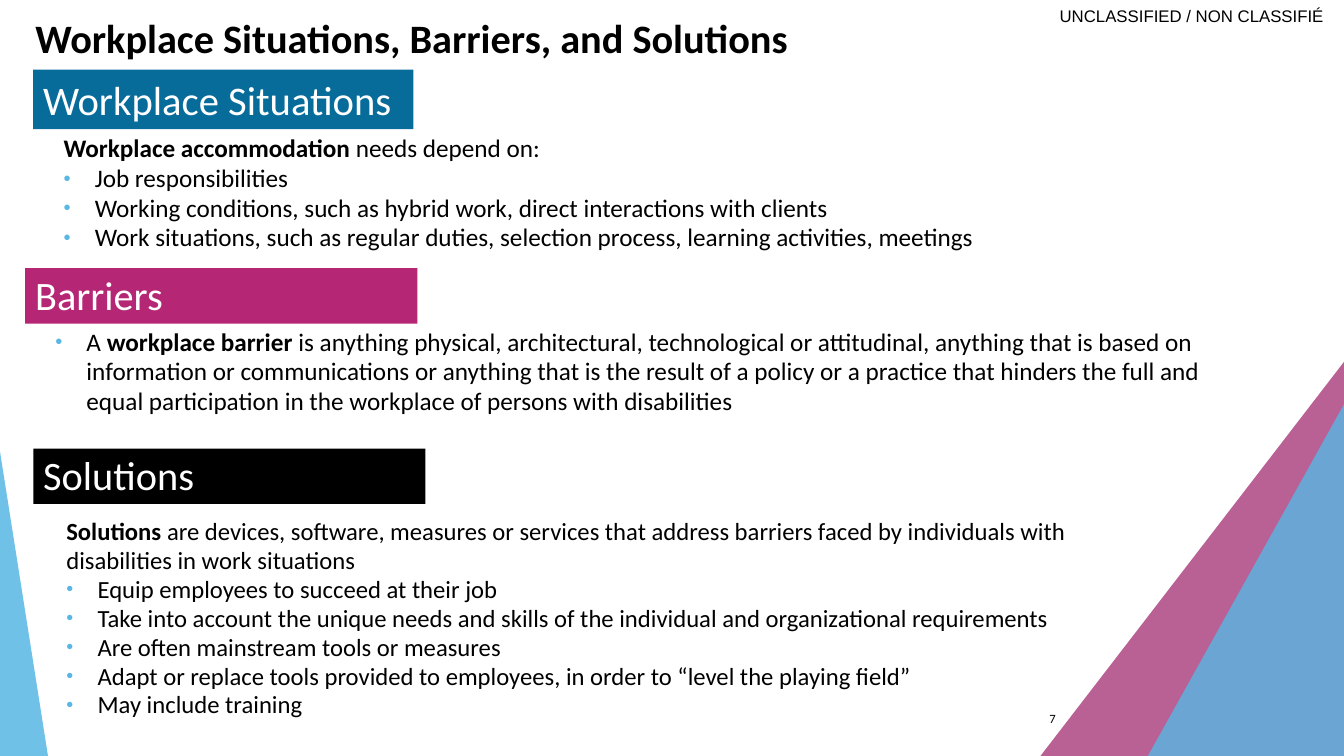
from lxml import etree
from pptx import Presentation
from pptx.dml.color import RGBColor
from pptx.enum import shapes, text
from pptx.oxml.ns import qn
from pptx.util import Inches, Pt

BLACK = RGBColor(0x00, 0x00, 0x00)
WHITE = RGBColor(0xFF, 0xFF, 0xFF)
TEAL = RGBColor(0x08, 0x6C, 0x9B)
PINK = RGBColor(0xB5, 0x27, 0x75)
PLUM = RGBColor(0x9E, 0x24, 0x6B)
SKY = RGBColor(0x58, 0xB7, 0xE3)


def place(sp, left, top, width, height):
    sp.left, sp.top = Inches(left), Inches(top)
    sp.width, sp.height = Inches(width), Inches(height)


def add_filled(slide, kind, box, color):
    sp = slide.shapes.add_shape(kind, *map(Inches, box))
    sp.shadow.inherit = False
    sp.fill.solid()
    sp.fill.fore_color.rgb = color
    sp.line.fill.background()
    return sp


def add_triangle(slide, box, color, opacity, apex):
    sp = add_filled(slide, shapes.MSO_SHAPE.ISOSCELES_TRIANGLE, box, color)
    sp.adjustments[0] = apex
    clr = sp.fill._xPr.find(".//" + qn("a:srgbClr"))
    etree.SubElement(clr, qn("a:alpha"), val=str(opacity * 1000))


def style_run(r, size, color=BLACK, bold=False, font="Calibri"):
    r.font.name, r.font.size, r.font.bold = font, Pt(size), bold
    r.font.color.rgb = color


def add_heading(slide, box, label, color, size=28.8):
    sp = add_filled(slide, shapes.MSO_SHAPE.RECTANGLE, box, color)
    tf = sp.text_frame
    tf.vertical_anchor = text.MSO_ANCHOR.BOTTOM
    tf.text = label
    p = tf.paragraphs[0]
    p.alignment = text.PP_ALIGN.LEFT
    style_run(p.runs[0], size, WHITE)


def add_label(slide, box, label, size, font, inset):
    tf = slide.shapes.add_textbox(*map(Inches, box)).text_frame
    tf.word_wrap = True
    tf.vertical_anchor = text.MSO_ANCHOR.MIDDLE
    tf.margin_left = tf.margin_right = Inches(inset)
    tf.margin_top = tf.margin_bottom = Inches(inset / 2)
    tf.text = label
    p = tf.paragraphs[0]
    p.alignment = text.PP_ALIGN.RIGHT
    style_run(p.runs[0], size, font=font)


def set_bullet(p, bulleted):
    pPr = p._p.get_or_add_pPr()
    indent = Inches(0.31) if bulleted else 0
    pPr.set("marL", str(indent))
    pPr.set("indent", str(-indent))
    if not bulleted:
        etree.SubElement(pPr, qn("a:buNone"))
        return
    clr = etree.SubElement(pPr, qn("a:buClr"))
    etree.SubElement(clr, qn("a:srgbClr"), val=str(SKY))
    etree.SubElement(pPr, qn("a:buSzPct"), val="80000")
    etree.SubElement(pPr, qn("a:buFont"), typeface="Arial")
    etree.SubElement(pPr, qn("a:buChar"), char="•")


def fill_body(tf, size, paragraphs, before=0):
    """Each paragraph is (bulleted, text); asterisks enclose bold words."""
    tf.word_wrap = True
    tf.auto_size = text.MSO_AUTO_SIZE.NONE
    for i, (bulleted, content) in enumerate(paragraphs):
        p = tf.add_paragraph() if i else tf.paragraphs[0]
        p.line_spacing = 0.98
        p.space_before = Pt(0 if i else before)
        p.space_after = Pt(0)
        set_bullet(p, bulleted)
        for j, part in enumerate(content.split("*")):
            if part:
                r = p.add_run()
                r.text = part
                style_run(r, size, bold=j % 2 == 1)


def main():
    prs = Presentation()
    prs.slide_width, prs.slide_height = Inches(13.33), Inches(7.5)
    slide = prs.slides.add_slide(prs.slide_layouts[1])
    title, body = slide.placeholders

    # Corner decoration and classification mark
    add_triangle(slide, (10.25, 3.59, 3.08, 4), PLUM, 72, 1)
    add_triangle(slide, (11.34, 4.01, 1.99, 3.57), SKY, 80, 1)
    add_triangle(slide, (0, 4.48, 0.49, 3.11), SKY, 85, 0)
    add_label(slide, (10.11, 0, 3.02, 0.31), "UNCLASSIFIED / NON CLASSIFIÉ",
              12, "Arial", 0)

    # Title
    place(title, 0.25, 0.11, 7.84, 0.55)
    tf = title.text_frame
    tf.text = "Workplace Situations, Barriers, and Solutions"
    tf.auto_size = text.MSO_AUTO_SIZE.NONE
    tf.vertical_anchor = text.MSO_ANCHOR.BOTTOM
    tf.paragraphs[0].alignment = text.PP_ALIGN.LEFT
    style_run(tf.paragraphs[0].runs[0], 28.8, bold=True)

    # Workplace situations
    add_heading(slide, (0.33, 0.69, 3.77, 0.59), "Workplace Situations", TEAL, 29)
    place(body, 0.53, 1.28, 11.65, 1.66)
    fill_body(body.text_frame, 18, [
        (False, "*Workplace accommodation *needs depend on:"),
        (True, "Job responsibilities"),
        (True, "Working conditions, such as hybrid work, direct interactions "
               "with clients"),
        (True, "Work situations, such as regular duties, selection process, "
               "learning activities, meetings"),
    ], before=10)

    # Barriers
    add_heading(slide, (0.25, 2.66, 3.89, 0.55), "Barriers", PINK)
    barriers = slide.shapes.add_textbox(*map(Inches, (0.45, 3.2, 11.97, 1.26)))
    fill_body(barriers.text_frame, 18, [
        (True, "A *workplace barrier *is anything physical, architectural, "
               "technological or attitudinal, anything that is based on "
               "information or communications or anything that is the result "
               "of a policy or a practice that hinders the full and equal "
               "participation in the workplace of persons with disabilities"),
    ], before=10)

    # Solutions
    add_heading(slide, (0.33, 4.45, 3.89, 0.55), "Solutions", BLACK)
    solutions = slide.shapes.add_textbox(*map(Inches, (0.56, 5.08, 10.84, 2.33)))
    fill_body(solutions.text_frame, 17.6, [
        (False, "*Solutions* are devices, software, measures or services that "
                "address barriers faced by individuals with disabilities in "
                "work situations"),
        (True, "Equip employees to succeed at their job"),
        (True, "Take into account the unique needs and skills of the "
               "individual and organizational requirements"),
        (True, "Are often mainstream tools or measures"),
        (True, "Adapt or replace tools provided to employees, in order to "
               "“level the playing field”"),
        (True, "May include training"),
    ])

    # Slide number
    add_label(slide, (9.82, 6.93, 0.75, 0.4), "7", 9, "Calibri", 0.1)

    prs.save("out.pptx")


if __name__ == "__main__":
    main()
